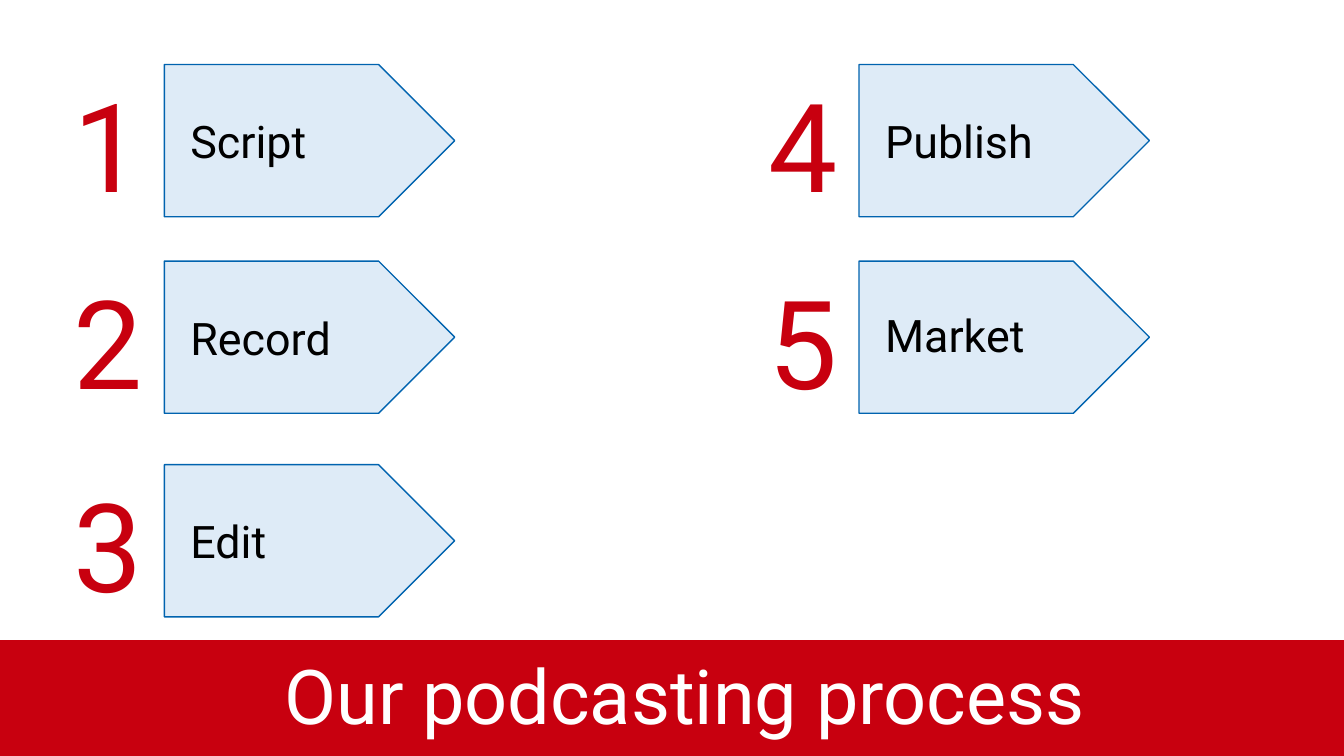
from pptx import Presentation
from pptx.dml.color import RGBColor
from pptx.enum import shapes, text
from pptx.util import Pt

PX = 9144  # EMU; 100 px to the inch
RED = RGBColor(0xC8, 0x00, 0x0F)
BLUE = RGBColor(0x00, 0x63, 0xAF)
PALE_BLUE = RGBColor(0xDE, 0xEB, 0xF7)
BLACK = RGBColor(0x00, 0x00, 0x00)
WHITE = RGBColor(0xFF, 0xFF, 0xFF)

ROW_TOPS = (64, 259, 461)
COLUMN_LEFTS = (63, 752)
# step name, top of its label below the row top
STEPS = (("Script", 44), ("Record", 44), ("Edit", 44), ("Publish", 44), ("Market", 41))


class ProcessSlide:
    font = "Roboto"

    def __init__(self, deck):
        self.page = deck.slides.add_slide(deck.slide_layouts.get_by_name("Title Only"))

    def add_words(self, frame, words, size, color):
        """Put one run of words into the first paragraph and return that paragraph."""
        para = frame.paragraphs[0]
        span = para.add_run()
        span.text = words
        span.font.name = self.font
        span.font.size = Pt(size)
        span.font.color.rgb = color
        return para

    def shape(self, kind, left, top, width, height, fill, line=None):
        shape = self.page.shapes.add_shape(
            kind, left * PX, top * PX, width * PX, height * PX)
        shape.shadow.inherit = False
        shape.fill.solid()
        shape.fill.fore_color.rgb = fill
        if line is None:
            shape.line.fill.background()
        else:
            shape.line.color.rgb = line
            shape.line.width = Pt(1)
        return shape

    def label(self, words, left, top, width, height, size, color):
        box = self.page.shapes.add_textbox(left * PX, top * PX, width * PX, height * PX)
        frame = box.text_frame
        frame.word_wrap = True
        frame.auto_size = text.MSO_AUTO_SIZE.SHAPE_TO_FIT_TEXT
        self.add_words(frame, words, size, color)

    def title_band(self, words):
        band = self.shape(shapes.MSO_SHAPE.RECTANGLE, 0, 635, 1333, 115, RED)
        title = self.page.shapes.title
        title.element.addprevious(band.element)  # the band lies behind the title
        title.left, title.top = 179 * PX, 645 * PX
        title.width, title.height = 1000 * PX, 95 * PX
        frame = title.text_frame
        frame.word_wrap = True
        frame.auto_size = text.MSO_AUTO_SIZE.NONE
        frame.vertical_anchor = text.MSO_ANCHOR.BOTTOM
        para = self.add_words(frame, words, 54, WHITE)
        para.alignment = text.PP_ALIGN.CENTER
        para.line_spacing = 0.9

    def step(self, number, name, left, top, label_drop):
        self.shape(shapes.MSO_SHAPE.PENTAGON, left + 100, top, 288, 151, PALE_BLUE, BLUE)
        self.label(name, left + 116, top + label_drop, 224, 64, 32, BLACK)
        self.label(str(number), left, top, 79, 158, 88, RED)


def main():
    deck = Presentation()
    deck.slide_width, deck.slide_height = 1333 * PX, 750 * PX
    slide = ProcessSlide(deck)
    slide.title_band("Our podcasting process")
    for index, (name, label_drop) in enumerate(STEPS):
        column, row = divmod(index, len(ROW_TOPS))
        slide.step(index + 1, name, COLUMN_LEFTS[column], ROW_TOPS[row], label_drop)
    deck.save("out.pptx")


if __name__ == "__main__":
    main()
